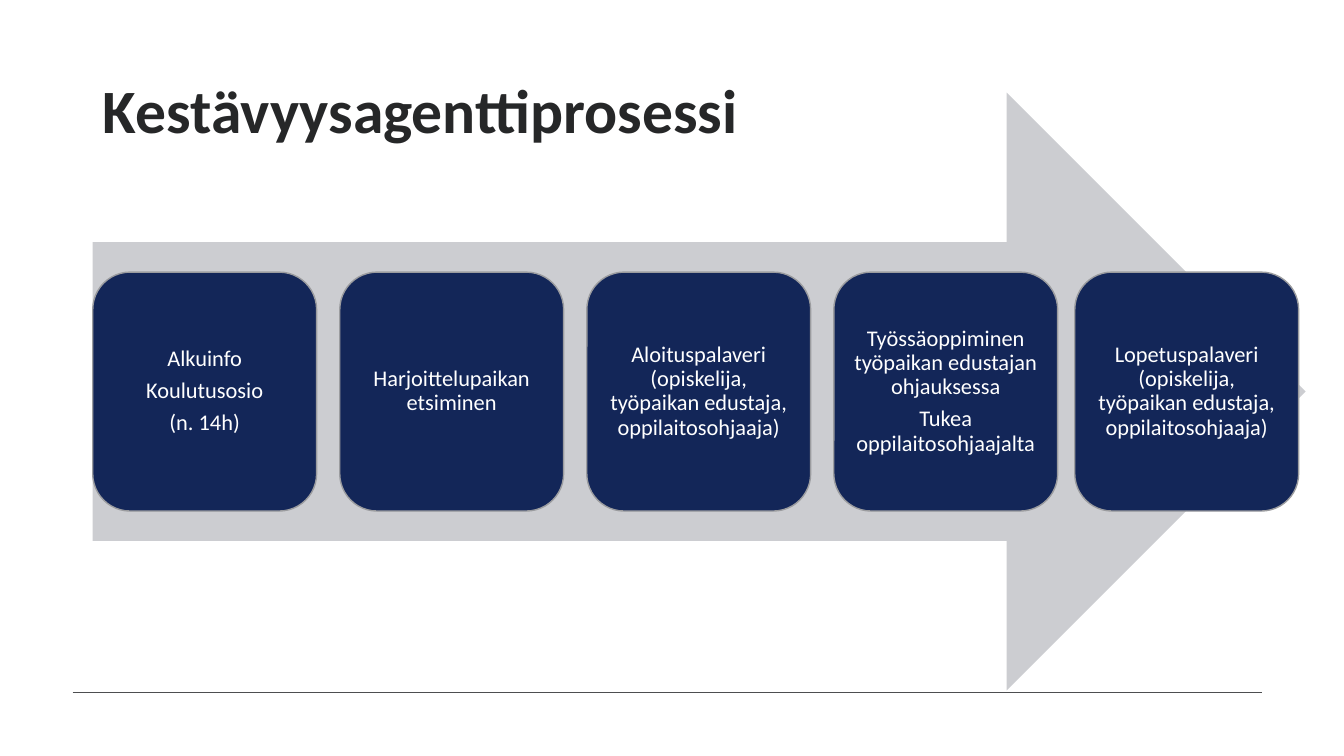
import pptx
import pptx.dml.color
import pptx.enum.shapes
import pptx.enum.text
import pptx.util
from lxml import etree

PX = 9144  # EMU per px, 100 px to the inch
FONT = "Calibri"
SHAPES = pptx.enum.shapes.MSO_SHAPE
ALIGN = pptx.enum.text.PP_ALIGN

STEPS = [
    ["Alkuinfo", "Koulutusosio", "(n. 14h)"],
    ["Harjoittelupaikan etsiminen"],
    ["Aloituspalaveri (opiskelija, työpaikan edustaja, oppilaitosohjaaja)"],
    ["Työssäoppiminen työpaikan edustajan ohjauksessa", "Tukea oppilaitosohjaajalta"],
    ["Lopetuspalaveri (opiskelija, työpaikan edustaja, oppilaitosohjaaja)"],
]
STEP_LEFT, STEP_PITCH, LAST_STEP_LEFT = 92, 245, 1066


def emu(*lengths):
    return [length * PX for length in lengths]


def color(value):
    return pptx.dml.color.RGBColor.from_string(value)


def set_attributes(target, values):
    for name, value in values.items():
        setattr(target, name, value)


def format_paragraph(paragraph, alignment, size, text_color, bold=False, space_after=0):
    set_attributes(paragraph, {
        "alignment": alignment,
        "line_spacing": 0.9,
        "space_before": pptx.util.Pt(0),
        "space_after": pptx.util.Pt(space_after),
    })
    set_attributes(paragraph.font, {"name": FONT, "size": pptx.util.Pt(size), "bold": bold})
    paragraph.font.color.rgb = color(text_color)


def set_title(slide, text):
    title = slide.shapes.title
    set_attributes(title, dict(zip(("left", "top", "width", "height"), emu(92, 40, 1150, 145))))
    set_attributes(title.text_frame, {
        "text": text,
        "word_wrap": True,
        "auto_size": pptx.enum.text.MSO_AUTO_SIZE.NONE,
        "vertical_anchor": pptx.enum.text.MSO_ANCHOR.MIDDLE,
    })
    format_paragraph(title.text_frame.paragraphs[0], ALIGN.LEFT, 44, "262728", bold=True)


def add_footer_line(slide):
    line = slide.shapes.add_connector(
        pptx.enum.shapes.MSO_CONNECTOR.STRAIGHT, *emu(72, 687, 1252, 687))
    line.line.color.rgb = color("4D4E50")
    line.line.width = pptx.util.Pt(1)
    etree.SubElement(line._element.spPr, pptx.oxml.ns.qn("a:effectLst"))


def add_filled_shape(slide, kind, box, fill, outline=None):
    shape = slide.shapes.add_shape(kind, *emu(*box))
    shape.shadow.inherit = False
    shape.fill.solid()
    shape.fill.fore_color.rgb = color(fill)
    if outline:
        shape.line.color.rgb = color(outline)
        shape.line.width = pptx.util.Pt(1)
    else:
        shape.line.fill.background()
    return shape


def add_step(slide, left, texts):
    step = add_filled_shape(slide, SHAPES.ROUNDED_RECTANGLE, (left, 270, 222, 237),
                            "132658", "9B9C9F")
    frame = step.text_frame
    sides = ("margin_left", "margin_top", "margin_right", "margin_bottom")
    set_attributes(frame, dict.fromkeys(sides, 7 * PX))
    set_attributes(frame, {
        "text": "\n".join(texts),
        "word_wrap": True,
        "vertical_anchor": pptx.enum.text.MSO_ANCHOR.MIDDLE,
    })
    for paragraph in frame.paragraphs:
        format_paragraph(paragraph, ALIGN.CENTER, 16, "FFFFFF", space_after=5.6)


def main():
    presentation = pptx.Presentation()
    presentation.slide_width, presentation.slide_height = emu(1333, 750)
    slide = presentation.slides.add_slide(presentation.slide_layouts.get_by_name("Title Only"))
    add_footer_line(slide)
    set_title(slide, "Kestävyysagenttiprosessi")
    add_filled_shape(slide, SHAPES.RIGHT_ARROW, (92, 92, 1203, 593), "CCCDD1")
    lefts = [STEP_LEFT + STEP_PITCH * index for index in range(len(STEPS) - 1)]
    for left, texts in zip(lefts + [LAST_STEP_LEFT], STEPS):
        add_step(slide, left, texts)
    presentation.save("out.pptx")


if __name__ == "__main__":
    main()
